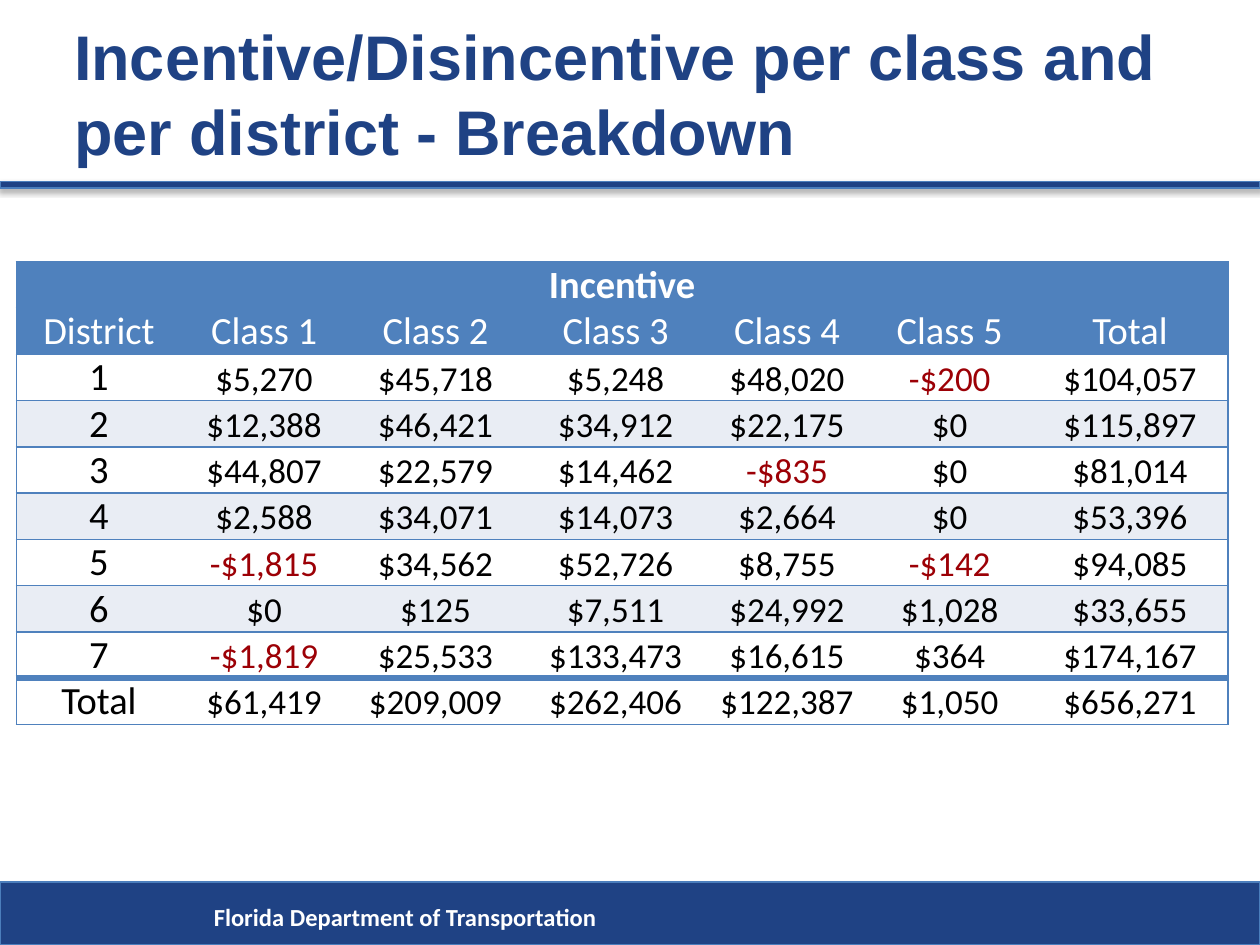
from dataclasses import dataclass
from typing import Any

from lxml import etree
from pptx import Presentation
from pptx.dml.color import RGBColor
from pptx.enum.shapes import MSO_SHAPE
from pptx.enum.text import MSO_ANCHOR, MSO_AUTO_SIZE, PP_ALIGN
from pptx.oxml.ns import qn
from pptx.util import Cm, Pt

RECT = MSO_SHAPE.RECTANGLE
LEFT, CENTER = PP_ALIGN.LEFT, PP_ALIGN.CENTER
MIDDLE, BOTTOM = MSO_ANCHOR.MIDDLE, MSO_ANCHOR.BOTTOM
NO_FIT = MSO_AUTO_SIZE.NONE

NAVY, EDGE, BLUE = "1F4284", "4B7EBC", "4F81BD"
WHITE, BLACK, RED, PALE = "FFFFFF", "000000", "9C0006", "E9EDF4"
PLAIN_STYLE = "{2D5ABB26-0587-4C30-8999-92F81FD0307C}"

TITLE = "Incentive/Disincentive per class and per district - Breakdown"
WIDTHS = [3.33, 3.33, 3.58, 3.68, 3.23, 3.33, 3.94]
ROW_H = 0.93
ROWS = [
    ["Incentive"] + [""] * 6,
    ["District", "Class 1", "Class 2", "Class 3", "Class 4", "Class 5", "Total"],
    ["1", "$5,270", "$45,718", "$5,248", "$48,020", "-$200", "$104,057"],
    ["2", "$12,388", "$46,421", "$34,912", "$22,175", "$0", "$115,897"],
    ["3", "$44,807", "$22,579", "$14,462", "-$835", "$0", "$81,014"],
    ["4", "$2,588", "$34,071", "$14,073", "$2,664", "$0", "$53,396"],
    ["5", "-$1,815", "$34,562", "$52,726", "$8,755", "-$142", "$94,085"],
    ["6", "$0", "$125", "$7,511", "$24,992", "$1,028", "$33,655"],
    ["7", "-$1,819", "$25,533", "$133,473", "$16,615", "$364", "$174,167"],
    ["Total", "$61,419", "$209,009", "$262,406", "$122,387", "$1,050", "$656,271"],
]


@dataclass
class Box:
    left: float
    top: float
    width: float
    height: float

    def lengths(self) -> list[int]:
        return [Cm(v) for v in (self.left, self.top, self.width, self.height)]


BARS = [Box(0, 3.66, 25.4, 0.13), Box(0, 17.78, 25.4, 1.27)]
TITLE_BOX = Box(1.24, 0.28, 22.86, 3.18)
FOOT_BOX = Box(4.06, 18.06, 20.27, 0.86)
TABLE_BOX = Box(0.33, 5.28, sum(WIDTHS), ROW_H * len(ROWS))


def paint(target: Any, color: str) -> None:
    """Give a fill, or the fill of a line, one solid colour."""
    target.solid()
    target.fore_color.rgb = RGBColor.from_string(color)


def write(frame: Any, text: str, color: str, align: Any = LEFT, **fmt: Any) -> None:
    frame.text = text
    para = frame.paragraphs[0]
    para.alignment = align
    font = para.runs[0].font
    for name, value in fmt.items():
        setattr(font, name, value)
    font.color.rgb = RGBColor.from_string(color)


def add_color(parent: Any, color: str) -> Any:
    return etree.SubElement(parent, qn("a:srgbClr"), val=color)


def add_bar(slide: Any, box: Box) -> None:
    bar = slide.shapes.add_shape(RECT, *box.lengths())
    bar.shadow.inherit = False
    paint(bar.fill, NAVY)
    paint(bar.line.fill, EDGE)
    bar.line.width = Pt(0.75)
    effects = bar._element.spPr.find(qn("a:effectLst"))
    shade = etree.SubElement(
        effects, qn("a:outerShdw"), blurRad=str(Pt(3.1)), dist=str(Pt(1.8)),
        dir="5400000", rotWithShape="0")
    etree.SubElement(add_color(shade, BLACK), qn("a:alpha"), val="35000")


def add_edge(cell: Any, side: str, width: float) -> None:
    props = cell._tc.get_or_add_tcPr()
    line = etree.SubElement(props, qn(f"a:ln{side}"), w=str(Pt(width)))
    add_color(etree.SubElement(line, qn("a:solidFill")), BLUE)


def style_cell(cell: Any, row: int, col: int) -> None:
    last = len(ROWS) - 1
    head = row < 2
    if col == 0:
        add_edge(cell, "L", 1)
    if col == len(WIDTHS) - 1 or row == 0:
        add_edge(cell, "R", 1)
    add_edge(cell, "T", 4 if row == last else 1)
    add_edge(cell, "B", 4 if row == last - 1 else 1)
    paint(cell.fill, BLUE if head else PALE if row % 2 and row < last else WHITE)
    cell.vertical_anchor = BOTTOM
    for side in ("left", "right", "top", "bottom"):
        setattr(cell, f"margin_{side}", 0)
    text = ROWS[row][col]
    if text:
        color = WHITE if head else RED if text.startswith("-") else BLACK
        size = Pt(22 if head or col == 0 else 20)
        write(cell.text_frame, text, color, CENTER,
              name="Calibri", size=size, bold=row == 0)


def add_grid(slide: Any) -> None:
    table = slide.shapes.add_table(
        len(ROWS), len(WIDTHS), *TABLE_BOX.lengths()).table
    table.first_row = table.horz_banding = False
    table._tbl.tblPr.find(qn("a:tableStyleId")).text = PLAIN_STYLE
    for col, width in zip(table.columns, WIDTHS):
        col.width = Cm(width)
    for row in table.rows:
        row.height = Cm(ROW_H)
    table.cell(0, 0).merge(table.cell(0, len(WIDTHS) - 1))
    for row, texts in enumerate(ROWS):
        for col in range(len(texts)):
            style_cell(table.cell(row, col), row, col)


def add_title(slide: Any) -> None:
    title = slide.shapes.title
    title.left, title.top, title.width, title.height = TITLE_BOX.lengths()
    frame = title.text_frame
    frame.auto_size = NO_FIT
    frame.vertical_anchor = MIDDLE
    write(frame, TITLE, NAVY, name="Arial", size=Pt(36), bold=True)


def add_foot(slide: Any) -> None:
    frame = slide.shapes.add_textbox(*FOOT_BOX.lengths()).text_frame
    frame.word_wrap = True
    write(frame, "Florida Department of Transportation", WHITE,
          name="Calibri", size=Pt(14), bold=True)


def main() -> None:
    deck = Presentation()
    deck.slide_width, deck.slide_height = Cm(25.4), Cm(19.05)
    slide = deck.slides.add_slide(deck.slide_layouts[5])
    for box in BARS:
        add_bar(slide, box)
    add_foot(slide)
    add_title(slide)
    add_grid(slide)
    deck.save("out.pptx")


if __name__ == "__main__":
    main()
